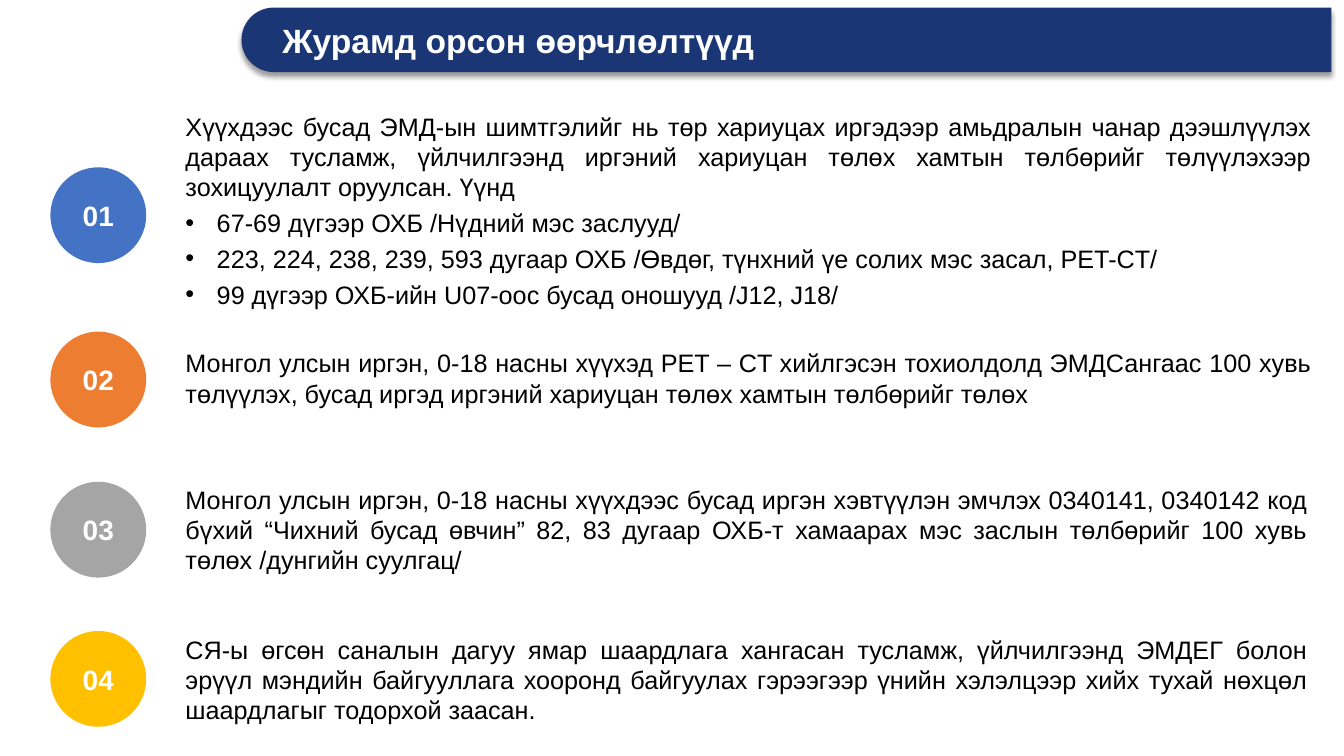
import pptx
import pptx.util
import pptx.dml.color
import pptx.enum.shapes
import pptx.enum.text
import pptx.oxml
import pptx.oxml.ns

Inches = pptx.util.Inches
Pt = pptx.util.Pt
RGBColor = pptx.dml.color.RGBColor
Shape = pptx.enum.shapes.MSO_SHAPE
Anchor = pptx.enum.text.MSO_ANCHOR
Align = pptx.enum.text.PP_ALIGN

NAVY = RGBColor(0x1A, 0x36, 0x75)
BLUE = RGBColor(0x44, 0x72, 0xC4)
ORANGE = RGBColor(0xED, 0x7D, 0x31)
GRAY = RGBColor(0xA5, 0xA5, 0xA5)
GOLD = RGBColor(0xFF, 0xC0, 0x00)
WHITE = RGBColor(0xFF, 0xFF, 0xFF)
BLACK = RGBColor(0, 0, 0)

TITLE = "Журамд орсон өөрчлөлтүүд"
ITEMS = [
    (BLUE, 1.66, (1.07, 11.27, 2.05),
     "Хүүхдээс бусад ЭМД-ын шимтгэлийг нь төр хариуцах иргэдээр амьдралын чанар дээшлүүлэх дараах тусламж, үйлчилгээнд иргэний хариуцан төлөх хамтын төлбөрийг төлүүлэхээр зохицуулалт оруулсан. Үүнд",
     ["67-69 дүгээр ОХБ /Нүдний мэс заслууд/",
      "223, 224, 238, 239, 593 дугаар ОХБ /Өвдөг, түнхний үе солих мэс засал, PET-CT/",
      "99 дүгээр ОХБ-ийн U07-оос бусад оношууд /J12, J18/"]),
    (ORANGE, 3.29, (3.42, 11.27, 0.66),
     "Монгол улсын иргэн, 0-18 насны хүүхэд PET – CT хийлгэсэн тохиолдолд ЭМДСангаас 100 хувь төлүүлэх, бусад иргэд иргэний хариуцан төлөх хамтын төлбөрийг төлөх", []),
    (GRAY, 4.78, (4.77, 11.23, 0.97),
     "Монгол улсын иргэн, 0-18 насны хүүхдээс бусад иргэн хэвтүүлэн эмчлэх 0340141, 0340142 код бүхий “Чихний бусад өвчин” 82, 83 дугаар ОХБ-т хамаарах мэс заслын төлбөрийг 100 хувь төлөх /дунгийн суулгац/", []),
    (GOLD, 6.26, (6.26, 11.23, 0.97),
     "СЯ-ы өгсөн саналын дагуу ямар шаардлага хангасан тусламж, үйлчилгээнд ЭМДЕГ болон эрүүл мэндийн байгууллага хооронд байгуулах гэрээгээр үнийн хэлэлцээр хийх тухай нөхцөл шаардлагыг тодорхой заасан.", []),
]
DISC_X, DISC = 0.5, 0.95
TEXT_X = 1.79
NS = pptx.oxml.ns.nsdecls("a")
SHADOW = (f'<a:effectLst {NS}><a:outerShdw blurRad="{Pt(4)}" dist="{Pt(3)}" dir="5400000" '
          'algn="ctr" rotWithShape="0"><a:srgbClr val="000000"><a:alpha val="40000"/>'
          '</a:srgbClr></a:outerShdw></a:effectLst>')


def style(par, size, color, bold, align):
    par.alignment = align
    for run in par.runs:
        font = run.font
        font.name = "Arial"
        font.size = Pt(size)
        font.bold = bold
        font.color.rgb = color


def add_solid(slide, kind, color, left, top, width, height):
    shape = slide.shapes.add_shape(
        kind, Inches(left), Inches(top), Inches(width), Inches(height))
    shape.shadow.inherit = False
    shape.fill.solid()
    shape.fill.fore_color.rgb = color
    shape.line.fill.background()
    return shape


def add_title(slide):
    banner = add_solid(slide, Shape.ROUND_2_SAME_RECTANGLE, NAVY, 7.48, -5.01, 0.64, 10.81)
    banner.rotation = 270
    banner.adjustments[0] = 0.5
    banner.adjustments[1] = 0
    props = banner._element.spPr
    props.remove(props.find(pptx.oxml.ns.qn("a:effectLst")))
    props.append(pptx.oxml.parse_xml(SHADOW))

    title = slide.shapes.title
    banner._element.addnext(title._element)
    title.left, title.top = Inches(2.7), Inches(0.1)
    title.width, title.height = Inches(10.36), Inches(0.64)
    frame = title.text_frame
    frame.text = TITLE
    frame.vertical_anchor = Anchor.MIDDLE
    frame.paragraphs[0].line_spacing = 0.9
    style(frame.paragraphs[0], 24, WHITE, True, Align.LEFT)


def add_disc(slide, num, color, top):
    disc = add_solid(slide, Shape.OVAL, color, DISC_X, top, DISC, DISC)
    frame = disc.text_frame
    frame.text = f"{num:02d}"
    frame.word_wrap = False
    frame.vertical_anchor = Anchor.MIDDLE
    style(frame.paragraphs[0], 20, WHITE, True, Align.CENTER)


def add_body(slide, place, lead, points):
    top, width, height = place
    box = slide.shapes.add_textbox(
        Inches(TEXT_X), Inches(top), Inches(width), Inches(height))
    frame = box.text_frame
    frame.word_wrap = True
    frame.margin_left = frame.margin_right = Inches(0.05)
    frame.margin_top = frame.margin_bottom = Inches(0.03)
    frame.text = lead
    style(frame.paragraphs[0], 18, BLACK, False, Align.JUSTIFY)
    for point in points:
        par = frame.add_paragraph()
        par.text = point
        props = par._element.get_or_add_pPr()
        props.set("marL", str(Inches(0.31)))
        props.set("indent", str(-Inches(0.31)))
        props.append(pptx.oxml.parse_xml(f'<a:buFont {NS} typeface="Arial"/>'))
        props.append(pptx.oxml.parse_xml(f'<a:buChar {NS} char="•"/>'))
        par.space_before = Pt(4)
        style(par, 18, BLACK, False, Align.JUSTIFY)


def main():
    deck = pptx.Presentation()
    deck.slide_width, deck.slide_height = Inches(13.33), Inches(7.5)
    slide = deck.slides.add_slide(deck.slide_layouts[5])
    add_title(slide)
    for num, (color, top, place, lead, points) in enumerate(ITEMS, 1):
        add_disc(slide, num, color, top)
        add_body(slide, place, lead, points)
    deck.save("out.pptx")


if __name__ == "__main__":
    main()
